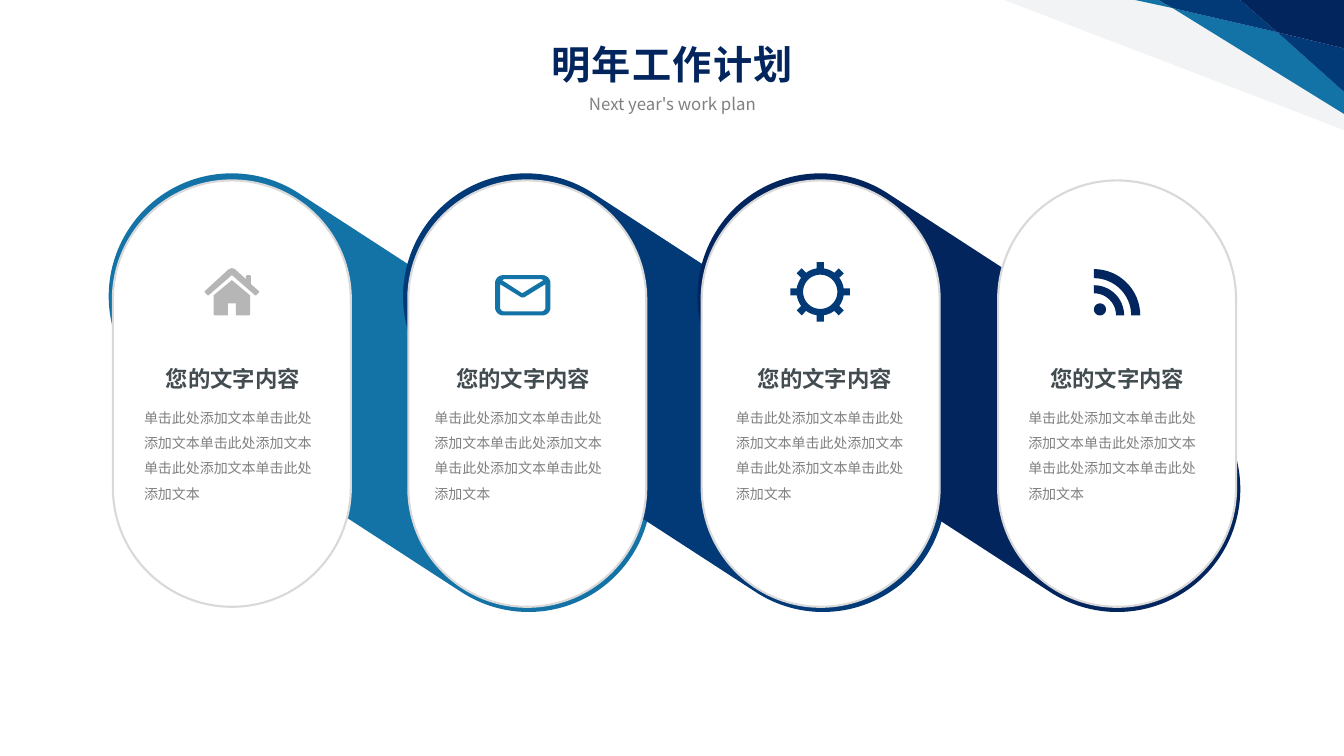
import math
import pptx
import pptx.util
import pptx.dml.color
import pptx.enum.shapes
import pptx.enum.text
import pptx.oxml.ns
import lxml.etree
from dataclasses import dataclass

Inches = pptx.util.Inches
SHAPE = pptx.enum.shapes.MSO_SHAPE
TEXT = pptx.enum.text


@dataclass(frozen=True)
class Theme:
    font: str = "Noto Sans CJK SC"
    navy: str = "03255D"
    blue: str = "023977"
    sky: str = "1372A6"
    pale: str = "F1F3F4"
    white: str = "FFFFFF"
    border: str = "D9D9D9"
    icon_gray: str = "B6B6B6"
    heading: str = "434D51"
    muted: str = "808080"
    title_size: int = 28
    heading_size: int = 16
    subtitle_size: int = 12
    body_size: int = 10


theme = Theme()

TITLE = "明年工作计划"
SUBTITLE = "Next year's work plan"
HEADING = "您的文字内容"
BODY = "单击此处添加文本" * 5
CARDS = [
    {"left": 1.12, "text_left": 1.33},
    {"left": 4.05, "text_left": 4.21},
    {"left": 6.96, "text_left": 7.2},
    {"left": 9.9, "text_left": 10.1},
]
CARD_TOP, CARD_WIDTH, CARD_HEIGHT = 1.79, 2.36, 4.23
BAND_COLORS = [theme.sky, theme.blue, theme.navy]
BAND_LEFT, BAND_PITCH = 2.55, 2.92
CORNER = [
    (theme.pale, [(9.96, 0), (13.33, 1.29), (13.33, 0)]),
    (theme.sky, [(11.26, 0), (11.63, 0.08), (11.49, 0)]),
    (theme.sky, [(11.63, 0.08), (13.33, 1.13), (13.33, 0.91), (12.67, 0.32)]),
    (theme.blue, [(12.67, 0.32), (13.33, 0.91), (13.33, 0.48)]),
    (theme.navy, [(12.3, 0), (12.67, 0.32), (13.33, 0.48), (13.33, 0)]),
    (theme.blue, [(11.49, 0), (11.63, 0.08), (12.67, 0.32), (12.3, 0)]),
]


def arc(cx, cy, radius, start, end, steps=16):
    angles = [math.radians(start + (end - start) * i / steps) for i in range(steps + 1)]
    return [(cx + radius * math.cos(a), cy + radius * math.sin(a)) for a in angles]


def house():
    body = [(2.3, 2.78), (2.48, 2.93), (2.48, 3.12), (2.47, 3.13), (2.34, 3.13),
            (2.34, 3.01), (2.26, 3.01), (2.26, 3.13), (2.13, 3.13), (2.12, 3.12), (2.12, 2.93)]
    roof = [(2.3, 2.66), (2.33, 2.67), (2.44, 2.77), (2.44, 2.74), (2.45, 2.73), (2.48, 2.73),
            (2.49, 2.74), (2.49, 2.82), (2.57, 2.89), (2.57, 2.9), (2.54, 2.93), (2.53, 2.93),
            (2.3, 2.73), (2.07, 2.93), (2.06, 2.93), (2.03, 2.9), (2.03, 2.89), (2.27, 2.67)]
    return [body, roof]


def envelope():
    corners = [(4.99, 2.81, 180), (5.38, 2.81, 270), (5.38, 3.05, 0), (4.99, 3.05, 90)]
    outline = [pt for cx, cy, a in corners for pt in arc(cx, cy, 0.08, a, a + 90, 6)]
    flap = [(4.98, 2.78), (5, 2.77), (5.37, 2.77), (5.39, 2.78), (5.18, 2.91)]
    pocket = [(4.96, 2.82), (5.17, 2.95), (5.2, 2.95), (5.41, 2.82)]
    pocket += arc(5.37, 3.05, 0.04, 0, 90, 5) + arc(5, 3.05, 0.04, 90, 180, 5)
    return [outline, flap, pocket]


def gear():
    cx, cy, rim, tip, half = 8.135, 2.895, 0.235, 0.295, 0.035
    base = math.degrees(math.asin(half / rim))
    edge = math.degrees(math.atan(half / tip))
    reach = math.hypot(tip, half)
    outline = []
    for a in range(0, 360, 45):
        outline += arc(cx, cy, reach, a - edge, a + edge, 1)
        outline += arc(cx, cy, rim, a + base, a + 45 - base, 5)
    return [outline, arc(cx, cy, 0.17, 0, 360, 48)]


def feed():
    waves = [arc(10.85, 3.13, outer, -90, 0) + arc(10.85, 3.13, inner, 0, -90)
             for outer, inner in [(0.3, 0.22), (0.46, 0.37)]]
    return waves + [arc(10.91, 3.07, 0.06, 0, 360, 24)]


ICONS = [(theme.icon_gray, house()), (theme.sky, envelope()),
         (theme.blue, gear()), (theme.navy, feed())]


def rgb(color):
    return pptx.dml.color.RGBColor.from_string(color)


def paint(sp, color, line=None):
    sp.shadow.inherit = False
    sp.fill.solid()
    sp.fill.fore_color.rgb = rgb(color)
    if line:
        sp.line.color.rgb = rgb(line)
        sp.line.width = pptx.util.Pt(1.5)
    else:
        sp.line.fill.background()


def add_outline(s, contours, color):
    points = [[(Inches(x), Inches(y)) for x, y in c] for c in contours]
    builder = s.shapes.build_freeform(*points[0][0], scale=1.0)
    builder.add_line_segments(points[0][1:], close=True)
    for contour in points[1:]:
        builder.move_to(*contour[0])
        builder.add_line_segments(contour[1:], close=True)
    paint(builder.convert_to_shape(), color)


def add_capsule(s, left, top, width, height, color, line=None):
    sp = s.shapes.add_shape(SHAPE.ROUNDED_RECTANGLE, Inches(left), Inches(top),
                            Inches(width), Inches(height))
    sp.adjustments[0] = 0.5
    paint(sp, color, line)
    return sp


def set_text(sp, text, size, color, bold=False, centered=True):
    tf = sp.text_frame
    tf.word_wrap = True
    tf.auto_size = TEXT.MSO_AUTO_SIZE.NONE
    tf.text = text
    p = tf.paragraphs[0]
    p.alignment = TEXT.PP_ALIGN.CENTER if centered else TEXT.PP_ALIGN.LEFT
    r = p.runs[0]
    r.font.name = theme.font
    r.font.size = pptx.util.Pt(size)
    r.font.bold = bold
    r.font.color.rgb = rgb(color)
    ea = lxml.etree.SubElement(r.font._element, pptx.oxml.ns.qn("a:ea"))
    ea.set("typeface", theme.font)
    return p


def add_text(s, left, top, width, height, *args, **kwargs):
    sp = s.shapes.add_textbox(Inches(left), Inches(top), Inches(width), Inches(height))
    return set_text(sp, *args, **kwargs)


def main():
    prs = pptx.Presentation()
    prs.slide_width, prs.slide_height = Inches(13.33), Inches(7.5)
    s = prs.slides.add_slide(prs.slide_layouts[5])

    for color, points in CORNER:
        add_outline(s, [points], color)

    title = s.shapes.title
    title.left, title.top = Inches(0), Inches(0.35)
    title.width, title.height = Inches(13.33), Inches(0.57)
    p = set_text(title, TITLE, theme.title_size, theme.navy, bold=True)
    p.runs[0].font._element.set("spc", "100")
    title.text_frame.vertical_anchor = TEXT.MSO_ANCHOR.MIDDLE
    add_text(s, 5.04, 0.88, 3.26, 0.3, SUBTITLE, theme.subtitle_size, theme.muted)

    for i, color in enumerate(BAND_COLORS):
        band = add_capsule(s, BAND_LEFT + i * BAND_PITCH, 0.92, 2.44, 5.95, color)
        band.rotation = 303

    for card in CARDS:
        add_capsule(s, card["left"], CARD_TOP, CARD_WIDTH, CARD_HEIGHT, theme.white, theme.border)

    for card, (color, contours) in zip(CARDS, ICONS):
        left = card["text_left"]
        p = add_text(s, left, 3.93, 1.95, 0.75, BODY, theme.body_size, theme.muted, centered=False)
        p.line_spacing = 1.5
        p.space_before = pptx.util.Pt(13.3)
        add_text(s, left - 0.16, 3.57, 2.28, 0.37, HEADING,
                 theme.heading_size, theme.heading, bold=True)
        add_outline(s, contours, color)

    prs.save("out.pptx")


if __name__ == "__main__":
    main()
